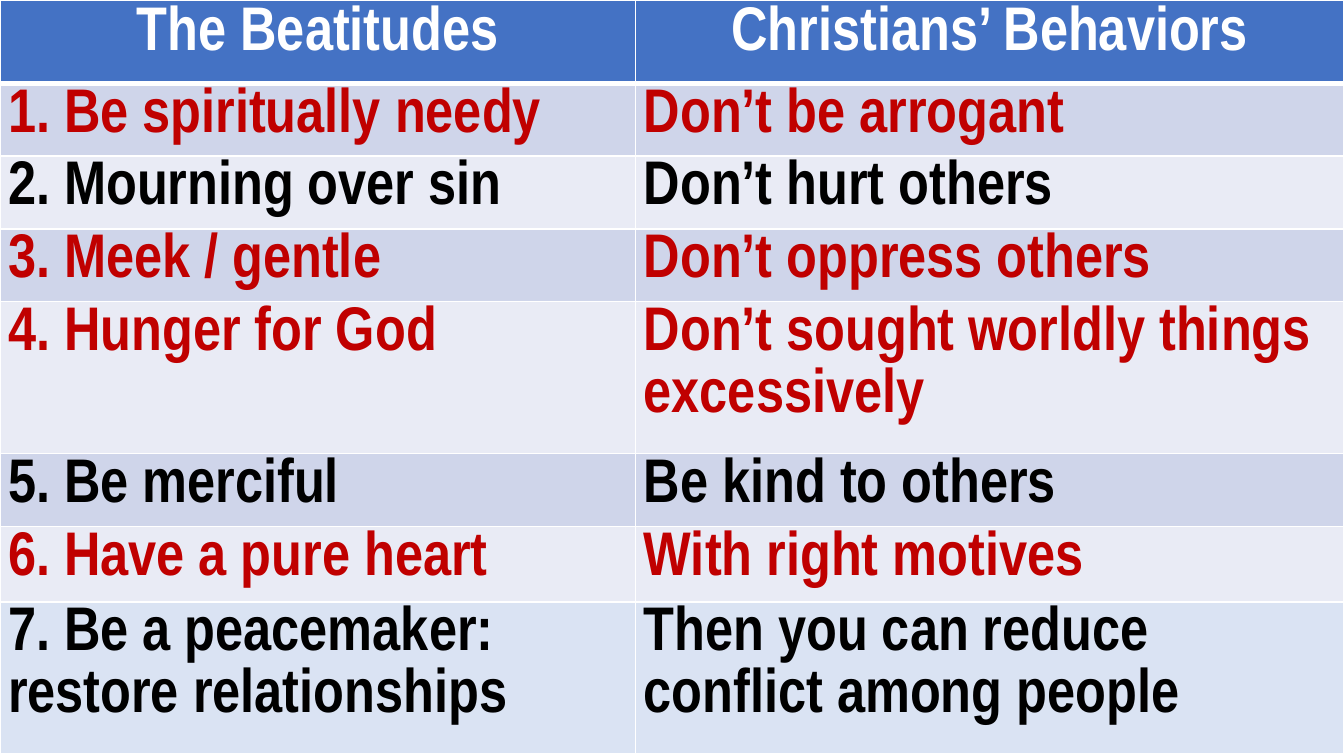
from lxml import etree
from pptx import Presentation
from pptx.dml.color import RGBColor
from pptx.enum.text import PP_ALIGN
from pptx.oxml.ns import qn
from pptx.util import Inches, Pt

CENTER, LEFT = PP_ALIGN.CENTER, PP_ALIGN.LEFT

THEME = {
    "font": "Arial Narrow", "size": 33, "line_spacing": 1.07,
    "white": "FFFFFF", "black": "000000", "red": "C00000",
    "header": "4472C4", "bands": ("CFD5EA", "E9EBF5"), "closing": "DAE3F3",
    "rule": 1, "header_rule": 3,
}

# Content: relative row height, text colour, the two cells
HEADER = (0.62, "white", ("The Beatitudes", "Christians’ Behaviors"))
BEATITUDES = [
    (0.54, "red", ("1. Be spiritually needy", "Don’t be arrogant")),
    (0.54, "black", ("2. Mourning over sin", "Don’t hurt others")),
    (0.54, "red", ("3. Meek / gentle", "Don’t oppress others")),
    (1.13, "red", ("4. Hunger for God", "Don’t sought worldly things excessively")),
    (0.54, "black", ("5. Be merciful", "Be kind to others")),
    (0.56, "red", ("6. Have a pure heart", "With right motives")),
    (1.13, "black", ("7. Be a peacemaker: restore relationships",
                     "Then you can reduce conflict among people")),
]
ROWS = [HEADER] + BEATITUDES
COLUMN_WIDTHS = (4.73, 5.27)
PAGE_WIDTH = 10
PAGE_HEIGHT = PAGE_WIDTH * 9 / 16
TABLE_HEIGHT = 5.61


def row_fill(index):
    if index == 0:
        return THEME["header"]
    if index == len(ROWS) - 1:
        return THEME["closing"]
    return THEME["bands"][(index - 1) % 2]


def set_borders(cell, top, bottom):
    """Draw the four cell borders, which must precede the fill."""
    properties = cell._tc.get_or_add_tcPr()
    widths = {"lnL": THEME["rule"], "lnR": THEME["rule"], "lnT": top, "lnB": bottom}
    for position, (side, width) in enumerate(widths.items()):
        line = etree.Element(qn(f"a:{side}"), w=str(Pt(width)))
        fill = etree.SubElement(line, qn("a:solidFill"))
        etree.SubElement(fill, qn("a:srgbClr"), val=THEME["white"])
        properties.insert(position, line)


def write_cell(cell, text, color, is_header):
    side, end = (0.07, 0.04) if is_header else (0.06, 0)
    cell.margin_left = cell.margin_right = Inches(side)
    cell.margin_top = cell.margin_bottom = Inches(end)
    para = cell.text_frame.paragraphs[0]
    para.alignment = CENTER if is_header else LEFT
    if not is_header:
        para.line_spacing = THEME["line_spacing"]
    span = para.add_run()
    span.text = text
    span.font.name = THEME["font"]
    span.font.size = Pt(THEME["size"])
    span.font.bold = True
    span.font.color.rgb = RGBColor.from_string(THEME[color])


def main():
    deck = Presentation()
    deck.slide_width, deck.slide_height = Inches(PAGE_WIDTH), Inches(PAGE_HEIGHT)
    page = deck.slides.add_slide(deck.slide_layouts[6])

    # Table grid, with the rows scaled to fill the table height
    table = page.shapes.add_table(
        len(ROWS), len(COLUMN_WIDTHS), 0, 0,
        Inches(sum(COLUMN_WIDTHS)), Inches(TABLE_HEIGHT)).table
    for column, width in zip(table.columns, COLUMN_WIDTHS):
        column.width = Inches(width)
    row_scale = TABLE_HEIGHT / sum(height for height, _, _ in ROWS)

    # Cells
    for index, (height, color, texts) in enumerate(ROWS):
        table.rows[index].height = Inches(height * row_scale)
        top = THEME["header_rule"] if index == 1 else THEME["rule"]
        bottom = THEME["header_rule"] if index == 0 else THEME["rule"]
        for cell, text in zip(table.rows[index].cells, texts):
            write_cell(cell, text, color, index == 0)
            cell.fill.solid()
            cell.fill.fore_color.rgb = RGBColor.from_string(row_fill(index))
            set_borders(cell, top, bottom)

    deck.save("out.pptx")


if __name__ == "__main__":
    main()
